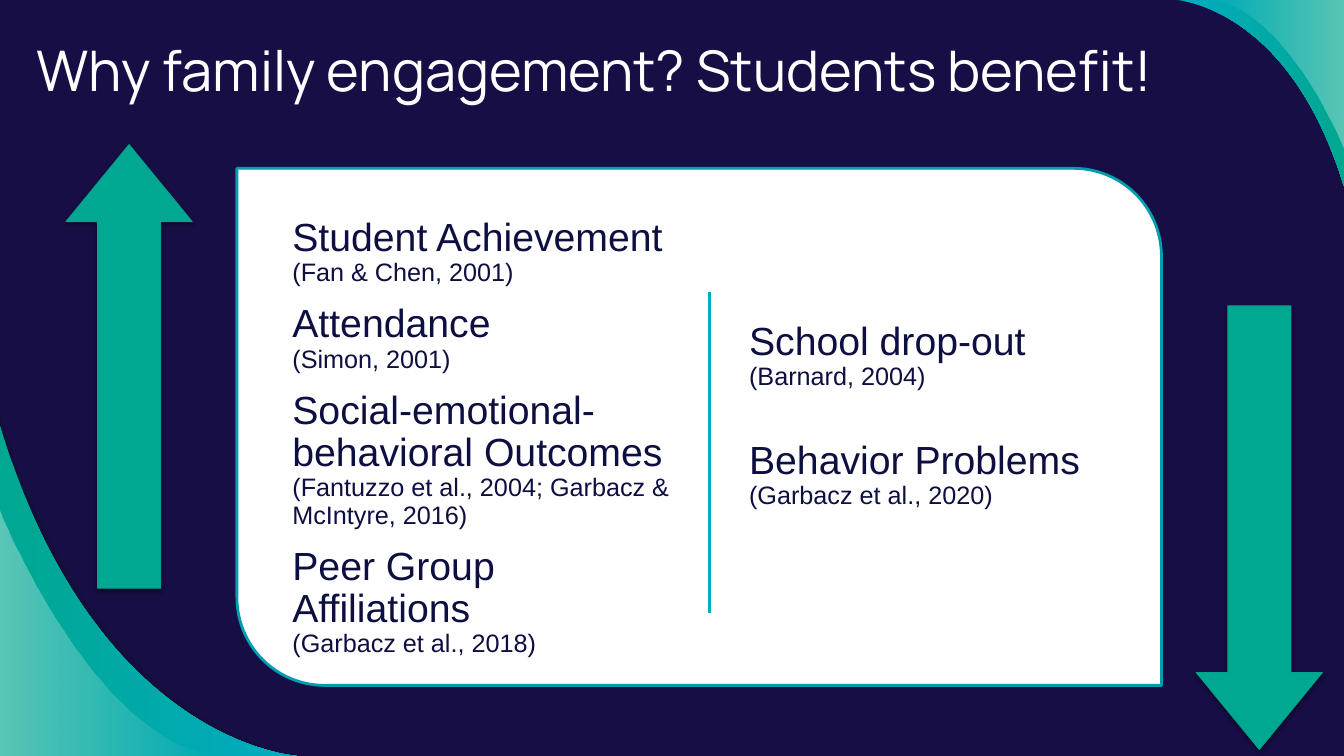
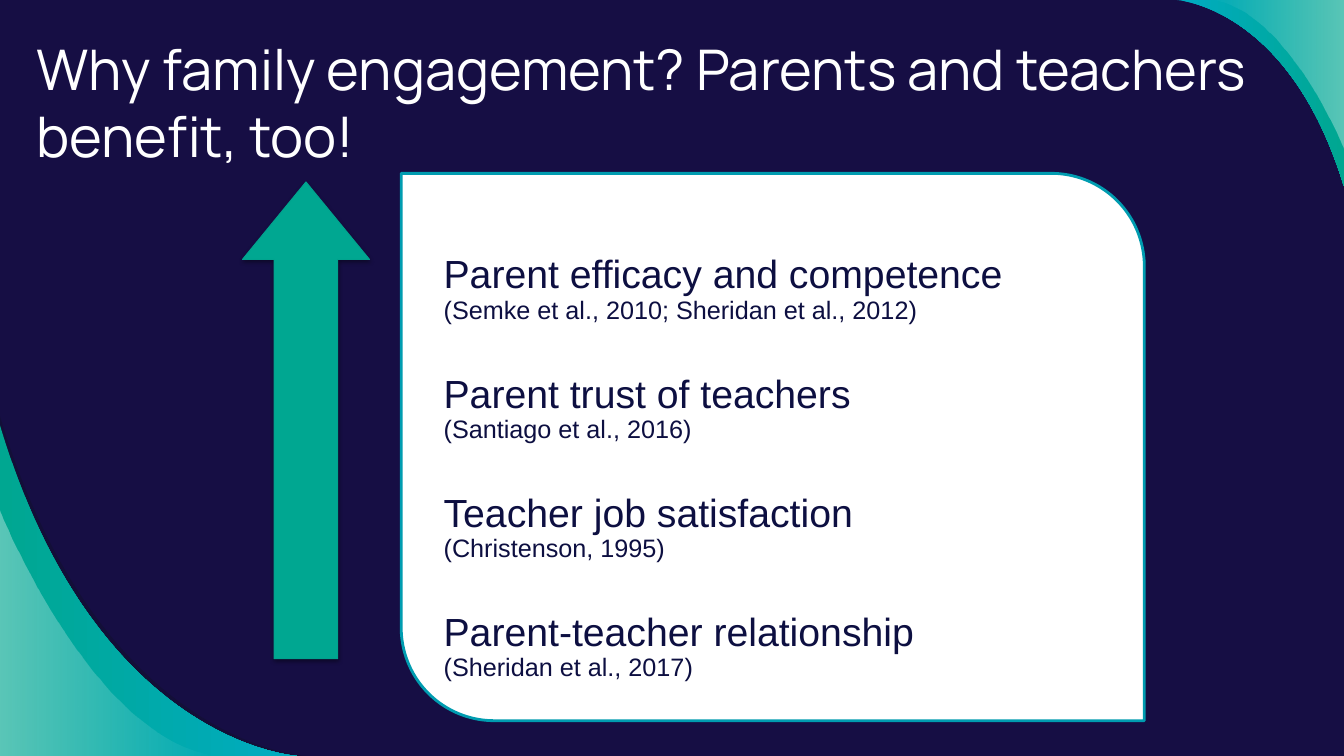
from lxml import etree
from pptx import Presentation
from pptx.dml.color import RGBColor
from pptx.enum.shapes import MSO_CONNECTOR, MSO_SHAPE
from pptx.enum.text import MSO_ANCHOR, MSO_AUTO_SIZE, PP_ALIGN
from pptx.oxml.ns import qn
from pptx.util import Inches, Pt

CARD = MSO_SHAPE.ROUND_2_DIAG_RECTANGLE
ARROW = MSO_SHAPE.RIGHT_ARROW
STRAIGHT = MSO_CONNECTOR.STRAIGHT
TOP = MSO_ANCHOR.TOP
LEFT = PP_ALIGN.LEFT
NO_AUTOFIT = MSO_AUTO_SIZE.NONE

COLORS = {
    "navy": "160E44",
    "shade": "12102F",
    "cyan": "00ACC2",
    "green": "00A791",
    "arrow_edge": "00A38E",
    "card_edge": "009CB0",
    "white": "FFFFFF",
    "ink": "0D0F41",
    "black": "000000",
}
TITLE_FONT, BODY_FONT = "Manrope", "Arial"
WIDTH, HEIGHT = 13.33, 7.5

SWEEPS = [
    ([(0, 4.13), (0.98, 7.39), (3.03, 7.5), (3.03, 7.5)], (0, HEIGHT),
     [("shade", 54)]),
    ([(0, 4.22), (0.95, 7.39), (2.95, 7.5), (2.95, 7.5)], (0, HEIGHT),
     [("green", 100), ("cyan", 100)]),
    ([(0, 5.06), (0, 5.06), (0.91, 7.35), (2.16, 7.5)], (0, HEIGHT),
     [("white", 36), ("white", 0)]),
    ([(11.67, 0), (11.67, 0), (12.79, 0.06), (WIDTH, 1.85)], (WIDTH, 0),
     [("cyan", 100), ("green", 100)]),
    ([(12.01, 0), (12.77, 0.09), (WIDTH, 1.49), (WIDTH, 1.49)], (WIDTH, 0),
     [("white", 0), ("white", 36)]),
]

STUDENT_GAINS = [
    ("Student Achievement", "(Fan & Chen, 2001)"),
    ("Attendance", "(Simon, 2001)"),
    ("Social-emotional-behavioral Outcomes",
     "(Fantuzzo et al., 2004; Garbacz & McIntyre, 2016)"),
    ("Peer Group Affiliations", "(Garbacz et al., 2018)"),
]
STUDENT_REDUCTIONS = [
    ("School drop-out", "(Barnard, 2004)"),
    ("Behavior Problems", "(Garbacz et al., 2020)"),
]
ADULT_GAINS = [
    ("Parent efficacy and competence",
     "(Semke et al., 2010; Sheridan et al., 2012)"),
    ("Parent trust of teachers", "(Santiago et al., 2016)"),
    ("Teacher job satisfaction", "(Christenson, 1995)"),
    ("Parent-teacher relationship", "(Sheridan et al., 2017)"),
]


def rgb(name):
    return RGBColor.from_string(COLORS[name])


def set_alpha(color_element, percent):
    alpha = etree.SubElement(color_element, qn("a:alpha"))
    alpha.set("val", str(percent * 1000))


def write(paragraph, text, font=BODY_FONT, size=18, color="ink"):
    run = paragraph.add_run()
    run.text = text
    run.font.name = font
    run.font.size = Pt(size)
    run.font.color.rgb = rgb(color)


def prepare_frame(frame, margin):
    frame.word_wrap = True
    frame.auto_size = NO_AUTOFIT
    frame.vertical_anchor = TOP
    frame.margin_left = frame.margin_right = Inches(margin)
    frame.margin_top = frame.margin_bottom = Inches(margin)


def bend_first_edge(sweep):
    outline = next(sweep.element.iter(qn("a:path")))
    curve = etree.Element(qn("a:cubicBezTo"))
    for segment in outline.findall(qn("a:lnTo"))[:3]:
        curve.append(segment[0])
        outline.remove(segment)
    outline.insert(1, curve)


def add_sweep(slide, controls, corner, stops):
    points = [(Inches(x), Inches(y)) for x, y in controls + [corner]]
    builder = slide.shapes.build_freeform(*points[0])
    builder.add_line_segments(points[1:], close=True)
    sweep = builder.convert_to_shape()
    bend_first_edge(sweep)
    sweep.shadow.inherit = False
    sweep.line.fill.background()
    if len(stops) == 1:
        sweep.fill.solid()
        sweep.fill.fore_color.rgb = rgb(stops[0][0])
    else:
        sweep.fill.gradient()
        sweep.fill.gradient_angle = 0
        for gradient_stop, (name, _) in zip(sweep.fill.gradient_stops, stops):
            gradient_stop.color.rgb = rgb(name)
    for color_element, (_, opacity) in zip(
            sweep.element.spPr.iter(qn("a:srgbClr")), stops):
        set_alpha(color_element, opacity)
    return sweep


def decorate_layout(layout, slide):
    layout.background.fill.solid()
    layout.background.fill.fore_color.rgb = rgb("navy")
    for index, sweep_parts in enumerate(SWEEPS):
        element = add_sweep(slide, *sweep_parts).element
        next(element.iter(qn("p:cNvPr"))).set("id", str(100 + index))
        layout.shapes.element.insert(2 + index, element)


def set_title(slide, text, top, width):
    title = slide.shapes.title
    title.left, title.top = Inches(0.26), Inches(top)
    title.width, title.height = Inches(width), Inches(0.92)
    prepare_frame(title.text_frame, 0.1)
    paragraph = title.text_frame.paragraphs[0]
    paragraph.alignment = LEFT
    paragraph.line_spacing = Pt(48)
    write(paragraph, text, font=TITLE_FONT, size=40, color="white")


def add_preset(slide, preset, box, adjustments, fill, edge, edge_width):
    shape = slide.shapes.add_shape(preset, *map(Inches, box))
    for index, value in enumerate(adjustments):
        shape.adjustments[index] = value
    shape.shadow.inherit = False
    shape.fill.solid()
    shape.fill.fore_color.rgb = rgb(fill)
    shape.line.color.rgb = rgb(edge)
    shape.line.width = Pt(edge_width)
    return shape


def add_card(slide, *box):
    add_preset(slide, CARD, box, (0, 0.17), "white", "card_edge", 2)


def add_trend_arrow(slide, *box, rotation):
    arrow = add_preset(slide, ARROW, box, (0.5, 0.61), "green", "arrow_edge", 0.75)
    arrow.rotation = rotation
    effects = arrow.element.spPr.find(qn("a:effectLst"))
    shadow = etree.SubElement(
        effects, qn("a:outerShdw"), blurRad=str(Pt(3.1)), dist=str(Pt(1.6)),
        dir="5400000", rotWithShape="0")
    shade = etree.SubElement(shadow, qn("a:srgbClr"), val=COLORS["black"])
    set_alpha(shade, 38)


def add_divider(slide, x, top, bottom):
    divider = slide.shapes.add_connector(
        STRAIGHT, Inches(x), Inches(top), Inches(x), Inches(bottom))
    divider.line.color.rgb = rgb("cyan")
    divider.line.width = Pt(2)
    etree.SubElement(divider.element.spPr, qn("a:effectLst"))


def add_findings(slide, findings, *box, gap):
    frame = slide.shapes.add_textbox(*map(Inches, box)).text_frame
    prepare_frame(frame, 0.12)
    for index, (outcome, citation) in enumerate(findings):
        paragraph = frame.add_paragraph() if index else frame.paragraphs[0]
        paragraph.line_spacing = 0.9
        paragraph.space_after = Pt(gap)
        write(paragraph, outcome, size=28)
        paragraph.add_line_break()
        write(paragraph, citation)


def build_students(slide):
    set_title(slide, "Why family engagement? Students benefit!", 0.25, 12.79)
    add_card(slide, 2.35, 1.67, 9.17, 5.13)
    add_divider(slide, 7.04, 2.9, 6.08)
    add_findings(slide, STUDENT_GAINS, 2.78, 2.04, 4.08, 3.42, gap=12)
    add_findings(slide, STUDENT_REDUCTIONS, 7.31, 3.07, 3.83, 1.75, gap=35.5)
    add_trend_arrow(slide, -0.92, 3.01, 4.4, 1.25, rotation=270)
    add_trend_arrow(slide, 10.29, 4.61, 4.4, 1.25, rotation=90)


def build_adults(slide):
    set_title(slide, "Why family engagement? Parents and teachers benefit, too!",
              0.24, 13.07)
    add_card(slide, 3.98, 1.72, 7.37, 5.43)
    add_findings(slide, ADULT_GAINS, 4.28, 2.41, 6.92, 3.63, gap=35.5)
    add_trend_arrow(slide, 0.67, 3.54, 4.73, 1.26, rotation=270)


def main():
    deck = Presentation()
    deck.slide_width, deck.slide_height = Inches(WIDTH), Inches(HEIGHT)
    layout = deck.slide_layouts[5]
    students, adults = (deck.slides.add_slide(layout) for _ in range(2))
    decorate_layout(layout, students)
    build_students(students)
    build_adults(adults)
    deck.save("out.pptx")


if __name__ == "__main__":
    main()
